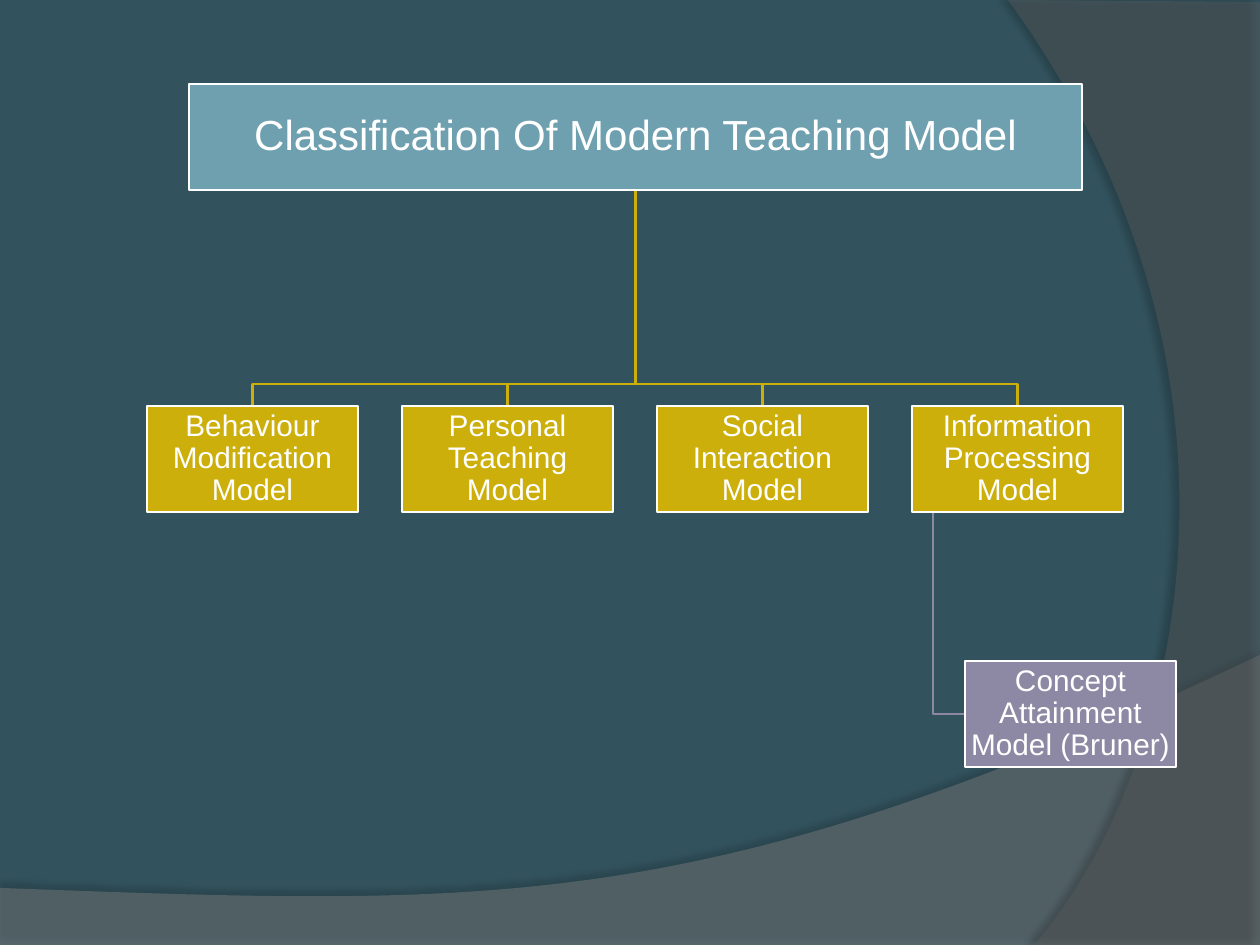
from lxml import etree
from pptx import Presentation
from pptx.dml.color import RGBColor
from pptx.enum.shapes import MSO_SHAPE
from pptx.enum.text import MSO_ANCHOR, PP_ALIGN
from pptx.oxml.ns import qn
from pptx.util import Emu, Pt

RECTANGLE = MSO_SHAPE.RECTANGLE
MIDDLE = MSO_ANCHOR.MIDDLE
CENTER = PP_ALIGN.CENTER

BACKGROUND = RGBColor(0x32, 0x52, 0x5D)
WAVE_GRAY = RGBColor(0x7F, 0x7F, 0x7F)
ARC_GRAY = RGBColor(0x5E, 0x5E, 0x5E)
BLUE = RGBColor(0x6E, 0xA0, 0xB0)
GOLD = RGBColor(0xCC, 0xAF, 0x0A)
PURPLE = RGBColor(0x8D, 0x89, 0xA4)
WHITE = RGBColor(0xFF, 0xFF, 0xFF)

# Content
TITLE = "Classification Of Modern Teaching Model"
MODELS = [
    "Behaviour Modification Model",
    "Personal Teaching Model",
    "Social Interaction Model",
    "Information Processing Model",
]
SUBMODEL = "Concept Attainment Model (Bruner)"

# Backdrop: straight corners, then a Bezier curve from the last corner
BACKDROPS = [
    {"corners": [(0, 888), (0, 946), (1260, 946), (1260, 655)],
     "curve": [(704, 919), (493, 906), (0, 888)],
     "color": WAVE_GRAY, "opacity": 45,
     "shadow_opacity": 35, "distance": 3.5, "direction": 270},
    {"corners": [(1260, 2), (1260, 945), (1034, 945)],
     "curve": [(1178, 780), (1283, 378), (1008, 0)],
     "color": ARC_GRAY, "opacity": 40,
     "shadow_opacity": 45, "distance": 4, "direction": 180},
]

# Layout in px
PX_PER_INCH = 126
SLIDE_WIDTH, SLIDE_HEIGHT = 1260, 945
BOX_WIDTH, BOX_HEIGHT = 211, 106
ROOT_LEFT, ROOT_TOP, ROOT_WIDTH = 189, 84, 893
MODEL_LEFT, MODEL_TOP, MODEL_STEP = 147, 406, 255
SUB_LEFT, SUB_TOP = 965, 661
BUS_Y, STEM_X = 384, 933
INSET = 2


def px(value):
    return Emu(round(value * 914400 / PX_PER_INCH))


def add_outline(slide, points, close):
    points = [(px(x), px(y)) for x, y in points]
    builder = slide.shapes.build_freeform(*points[0])
    builder.add_line_segments(points[1:], close=close)
    shape = builder.convert_to_shape()
    shape.shadow.inherit = False
    return shape


def curve_last_segment(shape, curve):
    """Turn the last straight segment into a cubic Bezier curve."""
    segment = list(shape.element.iter(qn("a:lnTo")))[-1]
    bezier = etree.Element(qn("a:cubicBezTo"))
    for x, y in curve:
        etree.SubElement(bezier, qn("a:pt"),
                         x=str(px(x) - shape.left), y=str(px(y) - shape.top))
    segment.getparent().replace(segment, bezier)


def add_alpha(color_element, percent):
    etree.SubElement(color_element, qn("a:alpha"), val=str(percent * 1000))


def add_backdrop(slide, backdrop):
    curve = backdrop["curve"]
    shape = add_outline(slide, backdrop["corners"] + curve[-1:], close=True)
    curve_last_segment(shape, curve)
    shape.fill.solid()
    shape.fill.fore_color.rgb = backdrop["color"]
    shape.line.fill.background()
    properties = shape.element.spPr
    add_alpha(properties.find(qn("a:solidFill"))[0], backdrop["opacity"])
    shadow = etree.SubElement(
        properties.find(qn("a:effectLst")), qn("a:outerShdw"), blurRad=str(Pt(4)),
        dist=str(Pt(backdrop["distance"])), dir=str(backdrop["direction"] * 60000),
        algn="ctr", rotWithShape="0")
    shadow_color = etree.SubElement(shadow, qn("a:srgbClr"), val="000000")
    add_alpha(shadow_color, backdrop["shadow_opacity"])


def add_elbow(slide, points, color):
    elbow = add_outline(slide, points, close=False)
    elbow.fill.background()
    elbow.line.color.rgb = color
    elbow.line.width = Pt(1.5)


def add_box(slide, text, left, top, width, color, size):
    shape = slide.shapes.add_shape(
        RECTANGLE, px(left), px(top), px(width), px(BOX_HEIGHT))
    shape.shadow.inherit = False
    shape.fill.solid()
    shape.fill.fore_color.rgb = color
    shape.line.color.rgb = WHITE
    shape.line.width = Pt(1.5)
    frame = shape.text_frame
    frame.text = text
    frame.word_wrap = True
    frame.vertical_anchor = MIDDLE
    frame.margin_left = frame.margin_right = px(INSET)
    frame.margin_top = frame.margin_bottom = px(INSET)
    paragraph = frame.paragraphs[0]
    paragraph.alignment = CENTER
    paragraph.line_spacing = 0.9
    font = paragraph.runs[0].font
    font.name = "Arial"
    font.size = Pt(size)
    font.color.rgb = WHITE


def main():
    presentation = Presentation()
    presentation.slide_width = px(SLIDE_WIDTH)
    presentation.slide_height = px(SLIDE_HEIGHT)
    slide = presentation.slides.add_slide(presentation.slide_layouts[6])
    slide.background.fill.solid()
    slide.background.fill.fore_color.rgb = BACKGROUND

    for backdrop in BACKDROPS:
        add_backdrop(slide, backdrop)

    # Elbow lines, behind the boxes
    root_x = ROOT_LEFT + ROOT_WIDTH / 2
    lefts = [MODEL_LEFT + MODEL_STEP * i for i in range(len(MODELS))]
    sub_y = SUB_TOP + BOX_HEIGHT / 2
    add_elbow(slide, [(STEM_X, MODEL_TOP + BOX_HEIGHT), (STEM_X, sub_y),
                      (SUB_LEFT, sub_y)], PURPLE)
    for left in reversed(lefts):
        center = left + BOX_WIDTH / 2
        add_elbow(slide, [(root_x, ROOT_TOP + BOX_HEIGHT), (root_x, BUS_Y),
                          (center, BUS_Y), (center, MODEL_TOP)], GOLD)

    # Boxes
    add_box(slide, TITLE, ROOT_LEFT, ROOT_TOP, ROOT_WIDTH, BLUE, 24)
    for text, left in zip(MODELS, lefts):
        add_box(slide, text, left, MODEL_TOP, BOX_WIDTH, GOLD, 17)
    add_box(slide, SUBMODEL, SUB_LEFT, SUB_TOP, BOX_WIDTH, PURPLE, 17)

    presentation.save("out.pptx")


if __name__ == "__main__":
    main()
